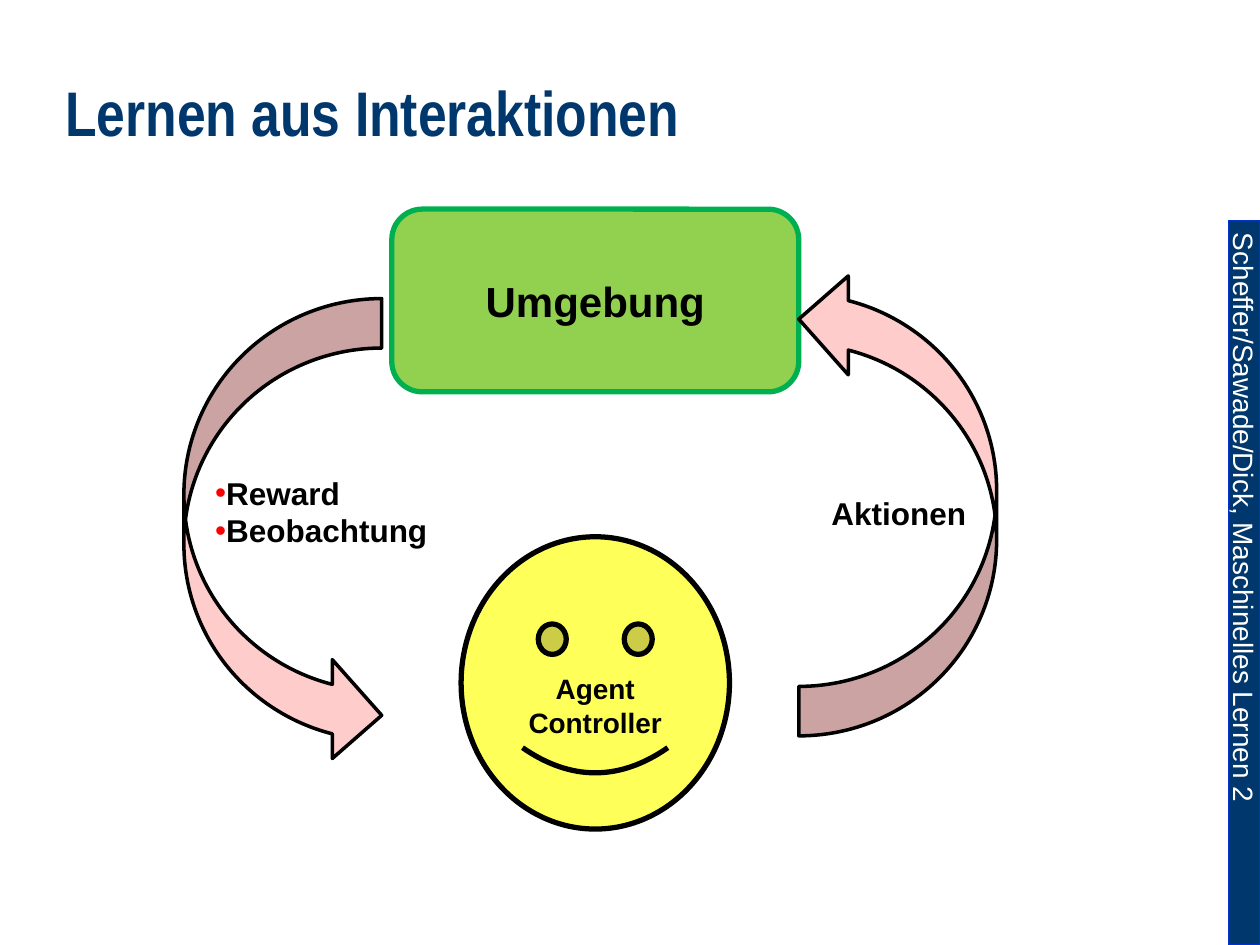
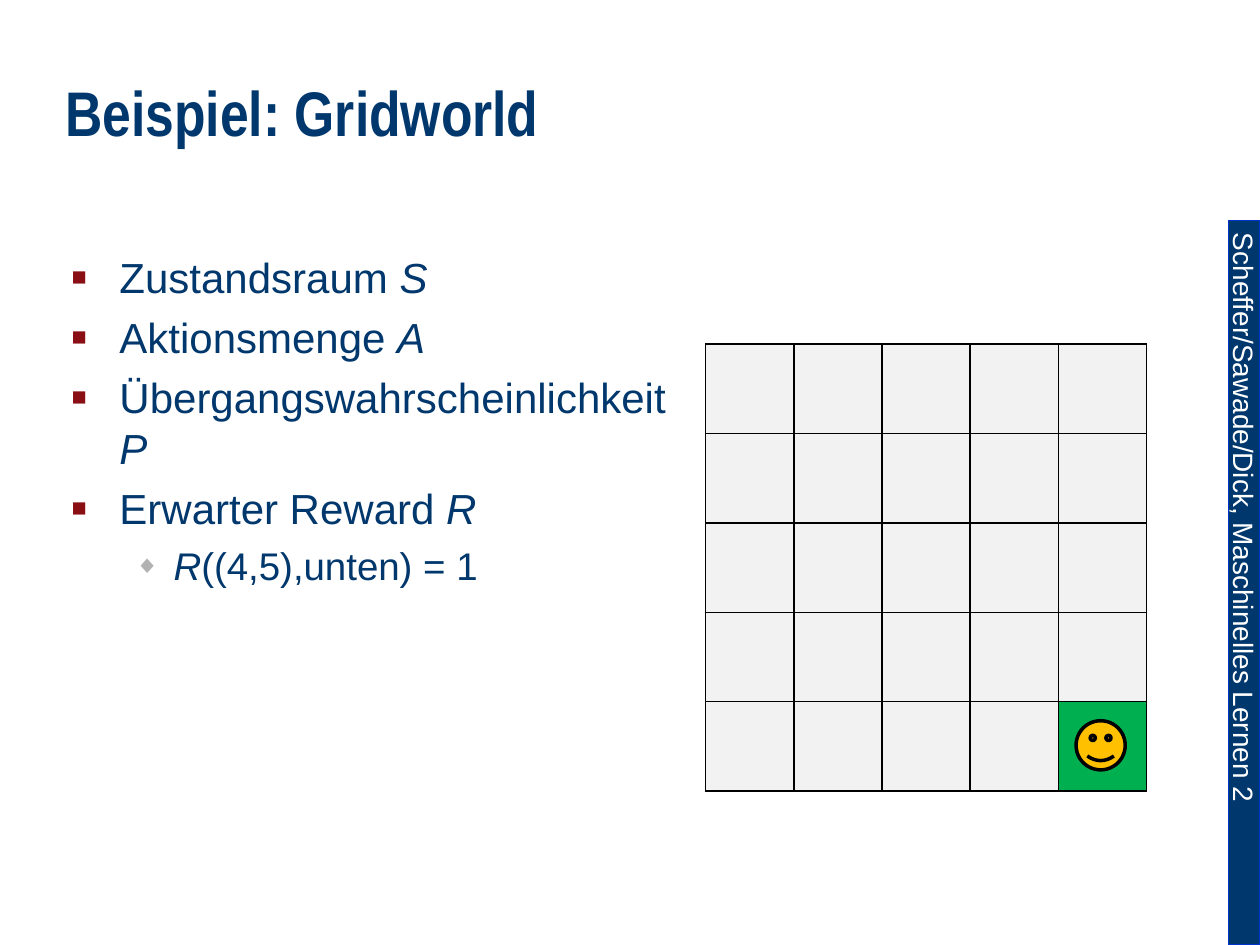
from lxml import etree
from pptx import Presentation
from pptx import util as u
from pptx.dml.color import RGBColor
from pptx.enum import shapes, text
from pptx.oxml import ns

# Shared look
NAVY, BAND_LINE, BLACK, WHITE = "00376C", "0033CC", "000000", "FFFFFF"
MAROON, GREY, RED, PINK = "8A0F14", "B2B2B2", "FF0000", "FFCCCC"
CELL, GREEN = "F2F2F2", "00B050"
BAND_TEXT = "Scheffer/Sawade/Dick, Maschinelles Lernen 2"
LABEL = {"size": 18, "color": BLACK, "bold": True}
BODY = {"size": 24, "color": NAVY}
SHAPE = shapes.MSO_SHAPE
ANCHOR, ALIGN = text.MSO_ANCHOR, text.PP_ALIGN


def rgb(value):
    return RGBColor.from_string(value)


def box(at):
    return [u.Inches(v) for v in at]


def sub(parent, tag, **attrs):
    return etree.SubElement(parent, ns.qn(tag), attrs)


def add_run(p, words, size, color, font="Arial", bold=False, italic=False):
    r = p.add_run()
    r.text = words
    r.font.color.rgb = rgb(color)
    formats = {"size": u.Pt(size), "name": font, "bold": bold, "italic": italic}
    for name, value in formats.items():
        setattr(r.font, name, value)


def add_bullet(p, char, color, percent=100, left=0, hanging=0):
    pPr = p._p.get_or_add_pPr()
    pPr.set("marL", str(u.Inches(left)))
    pPr.set("indent", str(-u.Inches(hanging)))
    sub(sub(pPr, "a:buClr"), "a:srgbClr", val=color)
    sub(pPr, "a:buSzPct", val=str(percent * 1000))
    sub(pPr, "a:buFont", typeface="Arial")
    sub(pPr, "a:buChar", char=char)


def add_text_box(s, at, wrap=True, anchor=ANCHOR.TOP):
    tf = s.shapes.add_textbox(*box(at)).text_frame
    tf.word_wrap, tf.vertical_anchor = wrap, anchor
    return tf


def add_figure(s, kind, at, fill, line, width):
    sp = s.shapes.add_shape(kind, *box(at))
    sp.shadow.inherit = False
    sp.fill.solid()
    sp.fill.fore_color.rgb = rgb(fill)
    sp.line.color.rgb = rgb(line)
    sp.line.width = u.Pt(width)
    return sp


def add_smiley(s, at, fill, width, smile):
    sp = add_figure(s, SHAPE.SMILEY_FACE, at, fill, BLACK, width)
    sp.adjustments[0] = smile
    return sp


def add_slide(prs, title):
    """Blank slide with the side band and the title."""
    s = prs.slides.add_slide(prs.slide_layouts[6])
    band = add_figure(s, SHAPE.RECTANGLE, (9.75, 1.75, 0.25, 5.75),
                      NAVY, BAND_LINE, 0.75)
    tf = band.text_frame
    tf.word_wrap, tf.vertical_anchor = False, ANCHOR.MIDDLE
    tf._txBody.bodyPr.set("vert", "eaVert")
    p = tf.paragraphs[0]
    p.alignment = ALIGN.LEFT
    add_run(p, BAND_TEXT, 16, WHITE)

    p = add_text_box(s, (0.42, 0.33, 8.5, 1.25), anchor=ANCHOR.MIDDLE).paragraphs[0]
    p.line_spacing = 0.7
    add_run(p, title, 36, NAVY, "Arial Narrow", bold=True)
    return s


def add_items(s, at, items):
    """Bulleted text: each item is (level, [(words, italic), ...])."""
    styles = [
        {"char": "■", "color": MAROON, "percent": 60, "left": 0.38, "hanging": 0.38},
        {"char": "◆", "color": GREY, "percent": 65, "left": 0.81, "hanging": 0.31},
    ]
    tf = add_text_box(s, at)
    for i, (level, parts) in enumerate(items):
        p = tf.paragraphs[0] if i == 0 else tf.add_paragraph()
        p.level = level
        p.space_before = u.Pt(5.5)
        add_bullet(p, **styles[level])
        for words, italic in parts:
            add_run(p, words, BODY["size"] - 2 * level, NAVY, italic=italic)


def style_cell(cell, fill):
    tcPr = cell._tc.get_or_add_tcPr()
    for side in ("a:lnL", "a:lnR", "a:lnT", "a:lnB"):
        ln = sub(tcPr, side, w=str(u.Pt(1)))
        sub(sub(ln, "a:solidFill"), "a:srgbClr", val=BLACK)
    cell.fill.solid()
    cell.fill.fore_color.rgb = rgb(fill)


def add_grid(s, left, top, count, cell_width, cell_height):
    """Square world whose last cell is the goal."""
    at = (left, top, count * cell_width, count * cell_height)
    table = s.shapes.add_table(count, count, *box(at)).table
    table.first_row = table.horz_banding = False
    for column in table.columns:
        column.width = u.Inches(cell_width)
    for row in table.rows:
        row.height = u.Inches(cell_height)
    for cell in table.iter_cells():
        style_cell(cell, CELL)
    goal = table.cell(count - 1, count - 1)
    goal.fill.fore_color.rgb = rgb(GREEN)


def build_interaction(prs):
    s = add_slide(prs, "Lernen aus Interaktionen")

    # Environment and agent
    world = add_figure(s, SHAPE.ROUNDED_RECTANGLE, (3.11, 1.66, 3.23, 1.45),
                       "92D050", GREEN, 3)
    p = world.text_frame.paragraphs[0]
    p.alignment = ALIGN.CENTER
    add_run(p, "Umgebung", 24, BLACK, bold=True)

    agent = add_smiley(s, (3.66, 4.26, 2.13, 2.32), "FFFF59", 3, 0.043)
    tf = agent.text_frame
    tf.vertical_anchor, tf.margin_top = ANCHOR.TOP, u.Inches(0.73)
    p = tf.paragraphs[0]
    p.alignment = ALIGN.CENTER
    add_run(p, "Agent", 16, BLACK, bold=True)
    p.add_line_break()
    add_run(p, "Controller", 16, BLACK, bold=True)

    # Loop between the two
    for left, top, turn in ((1.46, 2.37, 0), (6.34, 2.14, 180)):
        arrow = add_figure(s, SHAPE.CURVED_RIGHT_ARROW, (left, top, 1.57, 3.7),
                           PINK, BLACK, 2)
        arrow.rotation = turn

    # Labels
    tf = add_text_box(s, (6.5, 3.87, 1.28, 0.4), wrap=False)
    add_run(tf.paragraphs[0], "Aktionen", **LABEL)
    tf = add_text_box(s, (1.61, 3.71, 2.2, 0.71))
    for p, words in ((tf.paragraphs[0], "Reward"), (tf.add_paragraph(), "Beobachtung")):
        add_bullet(p, "•", RED)
        add_run(p, words, **LABEL)


def build_gridworld(prs):
    s = add_slide(prs, "Beispiel: Gridworld")
    add_items(s, (0.47, 1.95, 5, 5.15), [
        (0, [("Zustandsraum ", False), ("S", True)]),
        (0, [("Aktionsmenge ", False), ("A", True)]),
        (0, [("Übergangswahrscheinlichkeit ", False), ("P", True)]),
        (0, [("Erwarter Reward ", False), ("R", True)]),
        (1, [("R", True), ("((4,5),unten) = 1", False)]),
    ])
    add_grid(s, 5.6, 2.73, 5, 0.7, 0.71)
    add_smiley(s, (8.54, 5.72, 0.39, 0.39), "FFC000", 2, 0.047)


def main():
    prs = Presentation()
    prs.slide_width, prs.slide_height = u.Inches(10), u.Inches(7.5)
    build_interaction(prs)
    build_gridworld(prs)
    prs.save("out.pptx")


if __name__ == "__main__":
    main()
